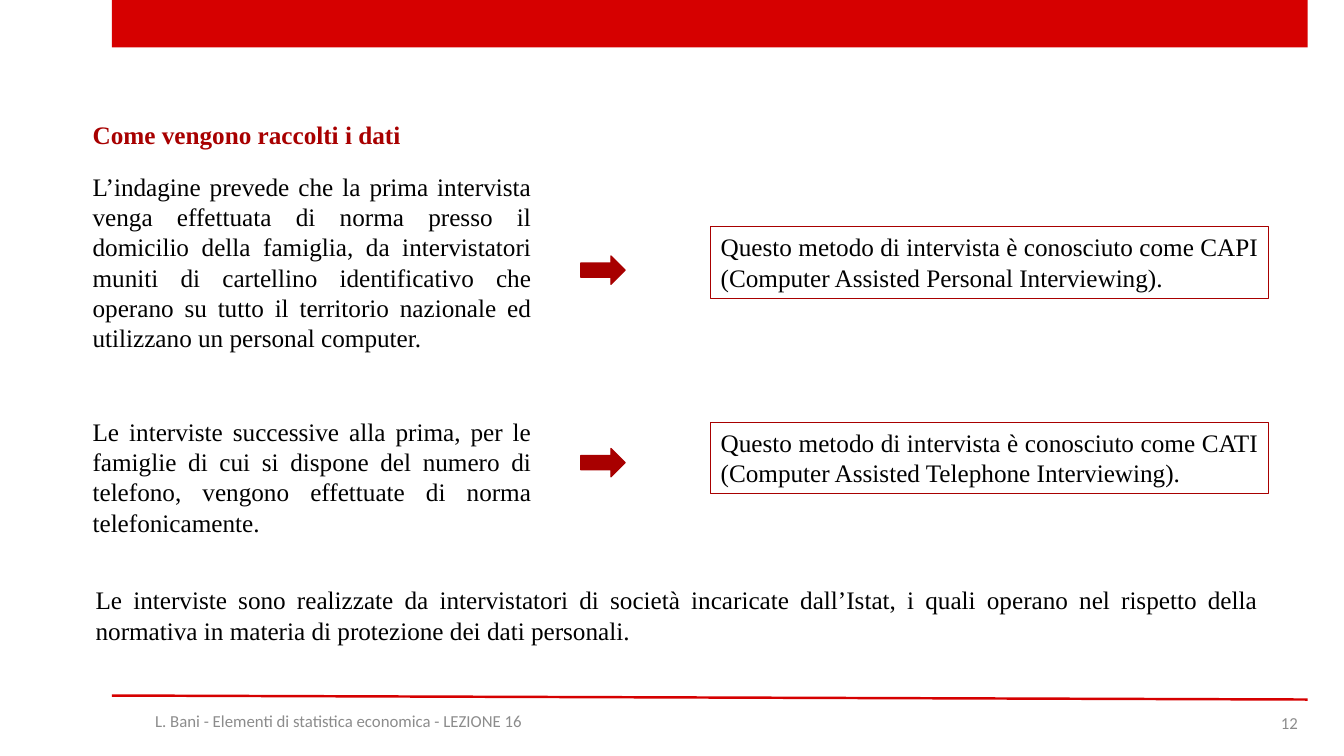
from pptx import Presentation
from pptx.dml.color import RGBColor
from pptx.enum.shapes import MSO_CONNECTOR as Conn, MSO_SHAPE as Shape
from pptx.enum.text import MSO_ANCHOR as Anchor, MSO_AUTO_SIZE as Auto, PP_ALIGN as Align
from pptx.oxml.ns import qn
from pptx.util import Inches, Pt
from lxml.etree import SubElement


def color(code):
    return RGBColor.from_string(code)


class Page:
    red = "D60000"
    dark = "A80000"
    black = "000000"
    gray = "8C8C8C"
    serif = "Times New Roman"
    sans = "Calibri"

    def __init__(self, deck):
        self.slide = deck.slides.add_slide(deck.slide_layouts[6])
        self.items = self.slide.shapes

    def block(self, kind, box, fill, edge=None, width=1):
        item = self.items.add_shape(kind, *map(Inches, box))
        item.shadow.inherit = False
        if fill:
            item.fill.solid()
            item.fill.fore_color.rgb = color(fill)
        else:
            item.fill.background()
        if edge:
            item.line.color.rgb = color(edge)
            item.line.width = Pt(width)
        else:
            item.line.fill.background()
        return item

    def rule(self, start, end):
        line = self.items.add_connector(Conn.STRAIGHT, *map(Inches, start + end))
        line.line.color.rgb = color(self.red)
        line.line.width = Pt(1.75)
        SubElement(line._element.spPr, qn("a:effectLst"))

    def label(self, item, text, tint=black, bold=False, wrap=True):
        frame = item.text_frame
        frame.word_wrap = wrap
        frame.auto_size = Auto.SHAPE_TO_FIT_TEXT
        frame.vertical_anchor = Anchor.TOP
        self.style(frame, text, Align.JUSTIFY, self.serif, 18, tint, bold)

    def style(self, frame, text, align, face, size, tint, bold=False):
        frame.text = text
        para = frame.paragraphs[0]
        para.alignment = align
        font = para.runs[0].font
        font.name = face
        font.size = Pt(size)
        font.bold = bold
        font.color.rgb = color(tint)

    def text(self, box, text, **look):
        self.label(self.items.add_textbox(*map(Inches, box)), text, **look)

    def framed(self, box, text):
        self.label(self.block(Shape.RECTANGLE, box, None, self.dark, 0.75), text)

    def footer(self, box, text, align):
        frame = self.items.add_textbox(*map(Inches, box)).text_frame
        frame.word_wrap = True
        frame.vertical_anchor = Anchor.MIDDLE
        self.style(frame, text, align, self.sans, 12, self.gray)


def main():
    deck = Presentation()
    deck.slide_width = Inches(13.33)
    deck.slide_height = Inches(7.5)
    page = Page(deck)

    page.block(Shape.RECTANGLE, (1.11, 0, 11.86, 0.47), page.red)
    page.rule((1.11, 6.9), (12.97, 6.94))
    page.text((0.82, 1.13, 3.29, 0.4), "Come vengono raccolti i dati",
              tint=page.dark, bold=True, wrap=False)

    steps = [
        (1.65, 1.92, 2.54, 2.25,
         "L’indagine prevede che la prima intervista venga effettuata di norma "
         "presso il domicilio della famiglia, da intervistatori muniti di "
         "cartellino identificativo che operano su tutto il territorio nazionale "
         "ed utilizzano un personal computer.",
         "CAPI (Computer Assisted Personal Interviewing)."),
        (4.08, 1.31, 4.45, 4.19,
         "Le interviste successive alla prima, per le famiglie di cui si dispone "
         "del numero di telefono, vengono effettuate di norma telefonicamente.",
         "CATI (Computer Assisted Telephone Interviewing)."),
    ]
    for top, height, arrow, frame, story, method in steps:
        page.text((0.82, top, 4.55, height), story)
        page.block(Shape.RIGHT_ARROW, (5.76, arrow, 0.44, 0.28), page.dark, page.dark)
        page.framed((7.05, frame, 5.53, 0.71),
                    "Questo metodo di intervista è conosciuto come " + method)

    page.text((0.85, 5.75, 11.73, 0.71),
              "Le interviste sono realizzate da intervistatori di società incaricate "
              "dall’Istat, i quali operano nel rispetto della normativa in materia di "
              "protezione dei dati personali.")
    page.footer((1.11, 6.95, 4.5, 0.4),
                "L. Bani - Elementi di statistica economica - LEZIONE 16", Align.CENTER)
    page.footer((9.97, 6.97, 3, 0.4), "12", Align.RIGHT)
    deck.save("out.pptx")


if __name__ == "__main__":
    main()
